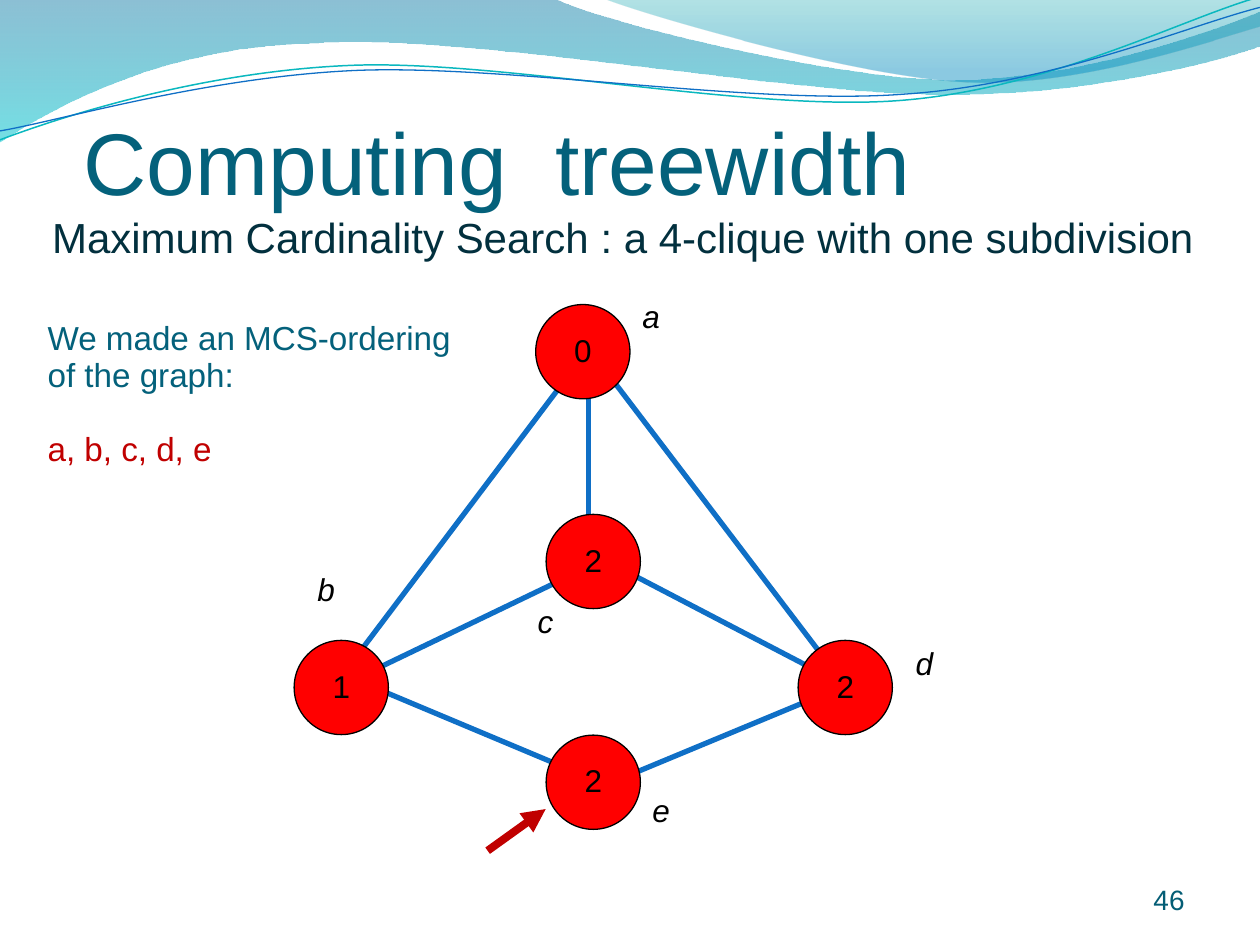
import pptx
import pptx.util
import pptx.dml.color
import pptx.enum.shapes
import pptx.enum.text
import pptx.oxml.ns
from lxml import etree

Cm, Pt = pptx.util.Cm, pptx.util.Pt
Anchor = pptx.enum.text.MSO_ANCHOR
Align = pptx.enum.text.PP_ALIGN
Fit = pptx.enum.text.MSO_AUTO_SIZE
Kind = pptx.enum.shapes.MSO_SHAPE
qn = pptx.oxml.ns.qn
FONT = "Arial"
NODE, CORE = 1.9, 1.35
PAD = (0.25, 0.13, 0.25, 0.13)
HEAD = (0, 0.13, 0, 0)
HUES = {
    "title": "04617B", "sub": "02303E", "page": "045D75", "mark": "C00000",
    "node": "FF0000", "ink": "000000", "edge": "0F6FC6", "teal": "0AB8BF",
    "navy": "0074A1", "aqua": "00C6CF", "sea": "00A1A9", "sky": "008BBF",
}

# Outlines: a start point, then lines (x, y) or curves (two handles and an end)
BAND = [(0, 0), (11.18, -0.03), (12.09, 0.43, 16.87, 1.6, 19.25, 1.6),
        (21.67, 1.6, 24.33, 0.66, 25.4, 0.23), (25.43, 0.91),
        (24.97, 1.12, 22.1, 1.93, 18.95, 1.9),
        (15.8, 1.9, 9.7, 0.71, 6.53, 0.86),
        (3.28, 0.91, 1.17, 2.11, -0.03, 2.87), (0, 0)]
CREST = [(12.17, -0.03), (12.93, 0.28, 17.32, 1.57, 19.53, 1.65),
         (21.74, 1.75, 24.41, 0.81, 25.4, 0.53), (25.4, 0), (12.17, -0.03)]
UPPER = [(0, 2.82), (1.22, 2.36, 4.01, 1.45, 7.04, 1.32),
         (10.03, 1.19, 15.06, 2.26, 18.11, 2.03),
         (21.16, 1.8, 23.83, 0.38, 25.35, -0.05)]
LOWER = [(0, 2.64), (1.19, 2.44, 4.17, 1.55, 7.19, 1.42),
         (10.24, 1.3, 15.16, 2.13, 18.21, 1.9),
         (21.23, 1.7, 23.9, 0.53, 25.4, 0.15)]

EDGES = [
    (11.86, 11.43, 6.99, 13.77), (12.07, 11.23, 16.94, 13.77),
    (11.86, 11.23, 11.86, 7.19), (6.78, 13.77, 12.07, 6.76),
    (17.15, 13.97, 11.84, 6.99), (17.15, 13.77, 12.07, 15.88),
    (6.78, 13.54, 11.86, 15.67),
]
# Count and centre
NODES = [("0", 11.75, 7.09), ("1", 6.88, 13.86), ("2", 11.96, 11.32),
         ("2", 11.96, 15.77), ("2", 17.04, 13.86)]
# Name, left, top, width
LABELS = [("a", 12.7, 5.92, 0.94), ("b", 6.15, 11.43, 0.94),
          ("c", 10.59, 12.07, 0.89), ("d", 18.21, 12.92, 0.94),
          ("e", 12.9, 15.88, 0.89)]


def rgb(name):
    return pptx.dml.color.RGBColor.from_string(HUES[name])


def tag(parent, name, **attrs):
    return etree.SubElement(parent, qn(name), **attrs)


def add_free(shapes, outline):
    """Draw an outline, joining each curve's three points into one Bézier."""
    pts = [(Cm(seg[i]), Cm(seg[i + 1]))
           for seg in outline for i in range(0, len(seg), 2)]
    pen = shapes.build_freeform(*pts[0])
    pen.add_line_segments(pts[1:], close=False)
    shape = pen.convert_to_shape()
    shape.shadow.inherit = False
    steps = iter(list(shape.element.iter(qn("a:lnTo"))))
    for seg in outline[1:]:
        step = next(steps)
        if len(seg) == 6:
            step.addprevious(curve := etree.Element(qn("a:cubicBezTo")))
            for part in (step, next(steps), next(steps)):
                curve.append(part[0])
                part.getparent().remove(part)
    return shape


def add_wave(shapes, outline, stops):
    """Add a sheer area; stops are (place, colour, opacity in percent)."""
    shape = add_free(shapes, outline)
    shape.line.fill.background()
    shape.fill.gradient()
    shape.fill.gradient_angle = 270
    for stop, (place, hue, _) in zip(shape.fill.gradient_stops, stops):
        stop.position = place
        stop.color.rgb = rgb(hue)
    marks = shape.element.spPr.iter(qn("a:srgbClr"))
    for mark, (_, _, alpha) in zip(marks, stops):
        tag(mark, "a:alpha", val=str(alpha * 1000))


def add_curve(shapes, outline, hue, width):
    shape = add_free(shapes, outline)
    shape.fill.background()
    shape.line.color.rgb = rgb(hue)
    shape.line.width = Pt(width)


def add_line(shapes, ends, hue, width, arrow=False):
    line = shapes.add_connector(
        pptx.enum.shapes.MSO_CONNECTOR.STRAIGHT, *map(Cm, ends))
    line.line.color.rgb = rgb(hue)
    line.line.width = Pt(width)
    if arrow:
        tag(line.line._get_or_add_ln(), "a:tailEnd", type="triangle")
    tag(line.element.spPr, "a:effectLst")


def style(para, size, hue, align=Align.LEFT, italic=False, lead=0.93):
    para.alignment = align
    para.line_spacing = lead
    font = para.font
    font.name, font.size, font.italic = FONT, Pt(size), italic
    font.color.rgb = rgb(hue)


def set_text(shape, text, size, hue, anchor=Anchor.TOP, pad=PAD,
             wrap=True, fit=Fit.NONE, **look):
    frame = shape.text_frame
    frame.auto_size, frame.word_wrap = fit, wrap
    frame.vertical_anchor = anchor
    (frame.margin_left, frame.margin_top,
     frame.margin_right, frame.margin_bottom) = map(Cm, pad)
    frame.text = text
    style(frame.paragraphs[0], size, hue, **look)


def add_text(shapes, box, *args, **look):
    set_text(shapes.add_textbox(*map(Cm, box)), *args, **look)


def add_plate(shapes, box, text, **look):
    """Add a clear, almost square-cornered plate that carries text."""
    plate = shapes.add_shape(Kind.ROUNDED_RECTANGLE, *map(Cm, box))
    plate.adjustments[0] = 0
    plate.shadow.inherit = False
    plate.fill.background()
    plate.line.fill.background()
    set_text(plate, text, 18, "ink", **look)


def add_node(shapes, count, x, y):
    parts = shapes.add_group_shape().shapes
    ball = parts.add_shape(Kind.OVAL, Cm(x - NODE / 2), Cm(y - NODE / 2),
                           Cm(NODE), Cm(NODE))
    ball.shadow.inherit = False
    ball.fill.solid()
    ball.fill.fore_color.rgb = rgb("node")
    ball.line.color.rgb = rgb("ink")
    ball.line.width = Pt(0.75)
    add_plate(parts, (x - CORE / 2, y - CORE / 2, CORE, CORE), count,
              anchor=Anchor.MIDDLE, align=Align.CENTER)


def set_note(note):
    note.left, note.top, note.width, note.height = map(
        Cm, (0.96, 6.42, 8.46, 3.84))
    set_text(note, "We made an MCS-ordering of the graph:", 19, "title",
             pad=(0, 0.04, 0, 0))
    order = note.text_frame.add_paragraph()
    order.text = "a, b, c, d, e"
    style(order, 19, "mark")
    order.space_before = Pt(21)


def main():
    deck = pptx.Presentation()
    deck.slide_width, deck.slide_height = Cm(25.4), Cm(19.05)
    shapes = deck.slides.add_slide(deck.slide_layouts[5]).shapes
    add_wave(shapes, BAND, [(0, "navy", 45), (1, "aqua", 55)])
    add_wave(shapes, CREST, [(0, "sea", 30), (0.8, "sky", 45)])
    swirl = shapes.add_group_shape().shapes
    add_curve(swirl, UPPER, "teal", 0.85)
    add_curve(swirl, LOWER, "edge", 0.75)
    set_note(shapes.title)
    for ends in EDGES:
        add_line(shapes, ends, "edge", 3)
    for node in NODES:
        add_node(shapes, *node)
    for name, x, y, width in LABELS:
        add_plate(shapes, (x, y, width, 1.27), name, wrap=False,
                  fit=Fit.SHAPE_TO_FIT_TEXT, italic=True)
    add_text(shapes, (22.02, 17.67, 2.11, 1.02), "46", 16, "page",
             align=Align.RIGHT, lead=1.0)
    add_text(shapes, (1.69, 1.9, 22.86, 2.39), "Computing  treewidth",
             50, "title", Anchor.BOTTOM, HEAD, lead=1.0)
    add_line(shapes, (9.83, 17.15, 11, 16.31), "mark", 4.5, arrow=True)
    add_text(shapes, (1.05, 3.83, 23.06, 1.47),
             "Maximum Cardinality Search : a 4-clique with one subdivision",
             24, "sub", Anchor.BOTTOM, HEAD)
    deck.save("out.pptx")


if __name__ == "__main__":
    main()
